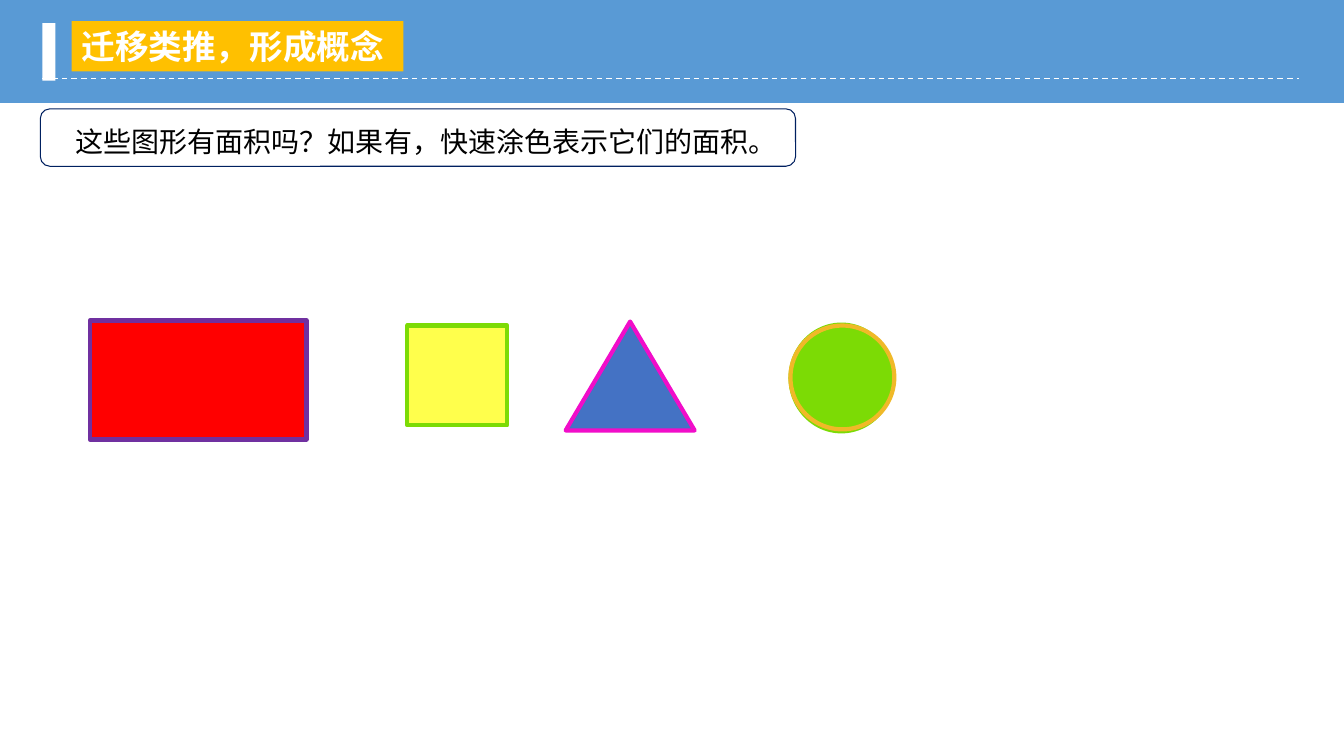
from lxml import etree
from pptx import Presentation
from pptx import util as u
from pptx.dml.color import RGBColor
from pptx.enum import dml, shapes, text
from pptx.oxml import ns

FONT = "Noto Sans CJK SC"
KIND = shapes.MSO_SHAPE


def add_shape(kind, box, fill=None, line=None, width=3):
    shape = slide.shapes.add_shape(kind, *map(u.Inches, box))
    shape.shadow.inherit = False
    if fill:
        shape.fill.solid()
        shape.fill.fore_color.rgb = RGBColor.from_string(fill)
    else:
        shape.fill.background()
    if line:
        shape.line.color.rgb = RGBColor.from_string(line)
        shape.line.width = u.Pt(width)
    else:
        shape.line.fill.background()
    return shape


def write(shape, wording, size, color, bold=False):
    frame = shape.text_frame
    frame.word_wrap = True
    frame.vertical_anchor = text.MSO_ANCHOR.TOP
    paragraph = frame.paragraphs[0]
    paragraph.text = wording
    paragraph.alignment = text.PP_ALIGN.LEFT
    paragraph.font.name = FONT
    paragraph.font.size = u.Pt(size)
    paragraph.font.bold = bold
    paragraph.font.color.rgb = RGBColor.from_string(color)
    properties = paragraph._p.pPr.find(ns.qn("a:defRPr"))
    etree.SubElement(properties, ns.qn("a:ea"), typeface=FONT)


presentation = Presentation()
presentation.slide_width = u.Inches(13.33)
presentation.slide_height = u.Inches(7.5)
slide = presentation.slides.add_slide(presentation.slide_layouts[6])

add_shape(KIND.RECTANGLE, (0, 0, 13.33, 1.02), "599AD5")
add_shape(KIND.RECTANGLE, (0.42, 0.23, 0.13, 0.57), "FFFFFF")

divider = slide.shapes.add_connector(
    shapes.MSO_CONNECTOR.STRAIGHT,
    u.Inches(0.42), u.Inches(0.78), u.Inches(12.88), u.Inches(0.78),
)
divider.line.color.rgb = RGBColor.from_string("FFFFFF")
divider.line.width = u.Pt(1)
divider.line.dash_style = dml.MSO_LINE.DASH
etree.SubElement(divider._element.spPr, ns.qn("a:effectLst"))

title = add_shape(KIND.RECTANGLE, (0.71, 0.21, 3.29, 0.5), "FFC000")
write(title, "迁移类推，形成概念", 24, "FFFFFF", bold=True)

add_shape(KIND.RECTANGLE, (0.89, 3.18, 2.15, 1.18), "FF0000", "7030A0")
square = add_shape(KIND.RECTANGLE, (4.04, 3.23, 0.99, 0.99), "FFFF00", "7CDB05")
square_color = square.fill._xPr.find(ns.qn("a:solidFill"))[0]
etree.SubElement(square_color, ns.qn("a:alpha"), val="70000")
add_shape(KIND.ISOSCELES_TRIANGLE, (5.61, 3.19, 1.28, 1.08), "4472C4", "F10DC9")
add_shape(KIND.OVAL, (7.82, 3.2, 1.05, 1.1), "7CDB05")
add_shape(KIND.OVAL, (7.84, 3.23, 1.03, 1.03), line="F0B928")

add_shape(KIND.ROUNDED_RECTANGLE, (0.4, 1.08, 7.49, 0.57), line="002060", width=0.75)
question = slide.shapes.add_textbox(*map(u.Inches, (0.65, 1.19, 7.19, 0.44)))
write(question, "这些图形有面积吗？如果有，快速涂色表示它们的面积。", 20, "000000")

presentation.save("out.pptx")
